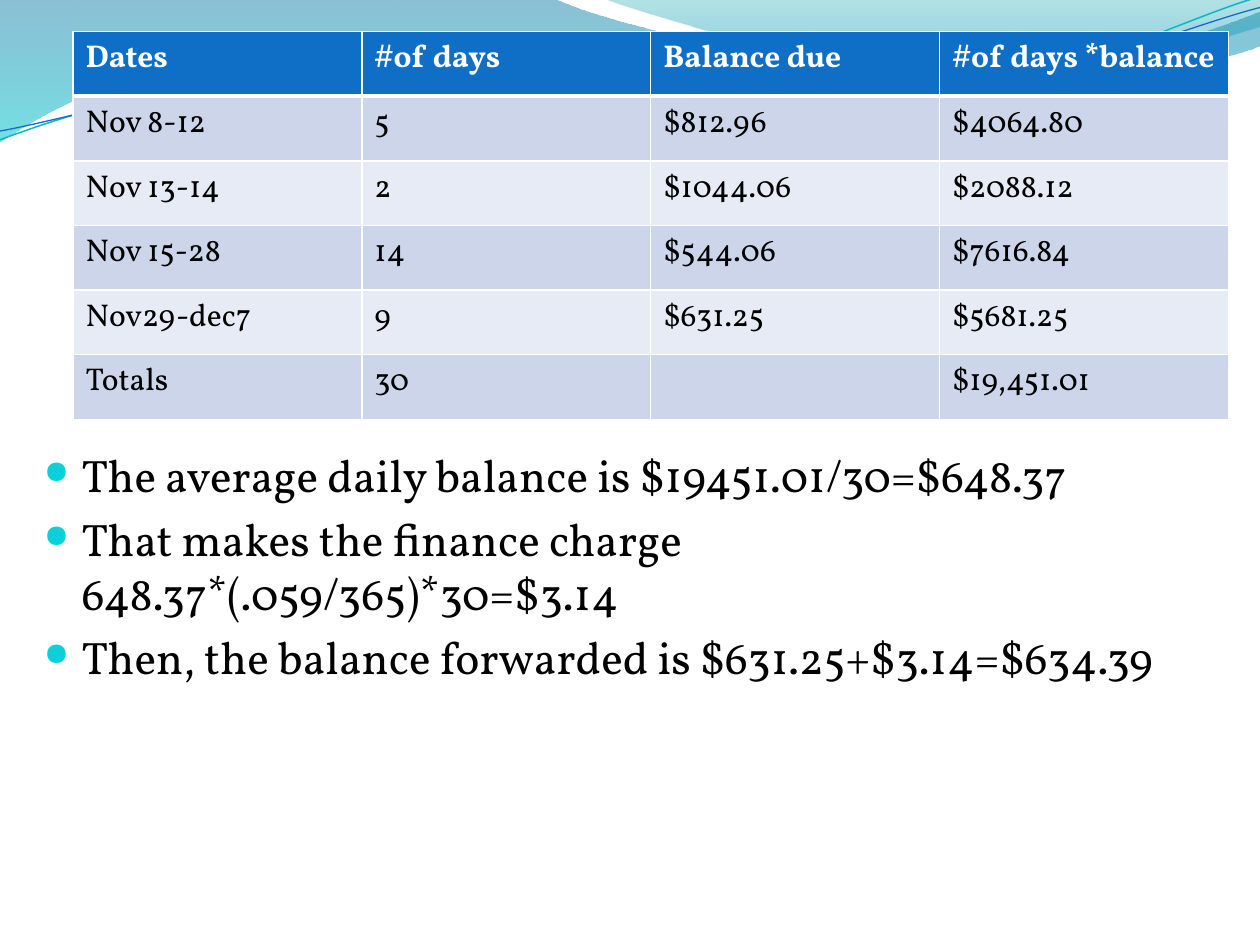
from dataclasses import dataclass
from math import cos, radians, sin
from typing import NamedTuple, Optional

from lxml.etree import SubElement
from pptx import Presentation
from pptx.dml.color import RGBColor as Rgb
from pptx.oxml.ns import qn
from pptx.util import Inches, Pt


@dataclass(frozen=True)
class Theme:
    font: str = "Vollkorn"
    table_size: int = 18
    body_size: int = 26
    bullet_percent: int = 70
    ink: str = "000000"
    paper: str = "FFFFFF"
    header: str = "0F6FC6"
    bands: tuple = ("CCD5EA", "E7EBF5")
    bullet: str = "0BD0D9"
    teal_line: str = "0AB8BF"


THEME = Theme()


class Stop(NamedTuple):
    position: float
    color: str
    opacity: int


@dataclass(frozen=True)
class Wave:
    start: tuple
    steps: tuple
    stops: tuple = ()
    stroke: Optional[str] = None
    stroke_width: float = 0
    tilt: float = 0
    pivot: tuple = (5, 0.58)


WAVES = (
    Wave((0, 0), (
        ((4.4, -0.01),),
        ((4.76, 0.17), (6.64, 0.63), (7.58, 0.63)),
        ((8.53, 0.63), (9.58, 0.26), (10, 0.09)),
        ((10.01, 0.36),),
        ((9.83, 0.44), (8.7, 0.76), (7.46, 0.75)),
        ((6.22, 0.75), (3.82, 0.28), (2.57, 0.34)),
        ((1.29, 0.36), (0.46, 0.83), (-0.01, 1.13)),
    ), stops=(Stop(0, "0074A1", 45), Stop(1, "00C6CF", 55))),
    Wave((4.79, -0.01), (
        ((5.09, 0.11), (6.82, 0.62), (7.69, 0.65)),
        ((8.56, 0.69), (9.61, 0.32), (10, 0.21)),
        ((10, 0),),
    ), stops=(Stop(0, "00A1A9", 30), Stop(0.8, "008BBF", 45))),
    Wave((0, 1.11), (
        ((0.48, 0.93), (1.58, 0.57), (2.77, 0.52)),
        ((3.95, 0.47), (5.93, 0.89), (7.13, 0.8)),
        ((8.33, 0.71), (9.38, 0.15), (9.98, -0.02)),
    ), stroke=THEME.teal_line, stroke_width=0.85, tilt=-2.7),
    Wave((0, 1.04), (
        ((0.47, 0.96), (1.64, 0.61), (2.83, 0.56)),
        ((4.03, 0.51), (5.97, 0.84), (7.17, 0.75)),
        ((8.36, 0.67), (9.41, 0.21), (10, 0.06)),
    ), stroke=THEME.header, stroke_width=0.75, tilt=-2.7),
)

BALANCES = (
    ("Dates", "#of days", "Balance due", "#of days *balance"),
    ("Nov 8-12", "5", "$812.96", "$4064.80"),
    ("Nov 13-14", "2", "$1044.06", "$2088.12"),
    ("Nov 15-28", "14", "$544.06", "$7616.84"),
    ("Nov29-dec7", "9", "$631.25", "$5681.25"),
    ("Totals", "30", "", "$19,451.01"),
)

CONCLUSIONS = (
    "The average daily balance is $19451.01/30=$648.37",
    "That makes the finance charge 648.37*(.059/365)*30=$3.14",
    "Then, the balance forwarded is $631.25+$3.14=$634.39",
)


def write(paragraph, text: str, *, size: int, color: str = THEME.ink, bold: bool = False) -> None:
    run = paragraph.add_run()
    run.text = text
    run.font.name = THEME.font
    run.font.size = Pt(size)
    run.font.bold = bold
    run.font.color.rgb = Rgb.from_string(color)


def level(point: tuple, wave: Wave) -> tuple:
    turn = radians(-wave.tilt)
    center_x, center_y = wave.pivot
    dx, dy = point[0] - center_x, point[1] - center_y
    return (Inches(center_x + dx * cos(turn) - dy * sin(turn)),
            Inches(center_y + dx * sin(turn) + dy * cos(turn)))


def bend(ribbon, wave: Wave) -> None:
    segments = iter(list(ribbon._element.iter(qn("a:lnTo"))))
    for step in wave.steps:
        first, *others = [next(segments) for _ in step]
        if not others:
            continue
        curve = first.makeelement(qn("a:cubicBezTo"))
        first.addprevious(curve)
        for segment in (first, *others):
            curve.append(segment[0])
            segment.getparent().remove(segment)


def draw_wave(slide, wave: Wave) -> None:
    builder = slide.shapes.build_freeform(*level(wave.start, wave))
    points = [level(point, wave) for step in wave.steps for point in step]
    builder.add_line_segments(points, close=bool(wave.stops))
    ribbon = builder.convert_to_shape()
    bend(ribbon, wave)
    ribbon.rotation = wave.tilt
    ribbon.shadow.inherit = False
    if not wave.stops:
        ribbon.fill.background()
        ribbon.line.color.rgb = Rgb.from_string(wave.stroke)
        ribbon.line.width = Pt(wave.stroke_width)
        return
    ribbon.line.fill.background()
    ribbon.fill.gradient()
    ribbon.fill.gradient_angle = 270
    for target, stop in zip(ribbon.fill.gradient_stops, wave.stops):
        target.position = stop.position
        target.color.rgb = Rgb.from_string(stop.color)
    colors = ribbon._element.spPr.iter(qn("a:srgbClr"))
    for color, stop in zip(colors, wave.stops):
        SubElement(color, qn("a:alpha"), val=str(stop.opacity * 1000))


def add_border(cell, side: str, width: float) -> None:
    border = SubElement(cell._tc.get_or_add_tcPr(), qn(f"a:ln{side}"), w=str(Pt(width)))
    paint = SubElement(border, qn("a:solidFill"))
    SubElement(paint, qn("a:srgbClr"), val=THEME.paper)


def draw_balances(slide) -> None:
    table = slide.shapes.add_table(
        len(BALANCES), len(BALANCES[0]),
        Inches(0.58), Inches(0.25), Inches(9.17), Inches(3.08),
    ).table
    for row, entries in enumerate(BALANCES):
        is_header = row == 0
        band = THEME.header if is_header else THEME.bands[(row - 1) % 2]
        widths = {"L": 1, "R": 1, "T": 3 if row == 1 else 1, "B": 3 if is_header else 1}
        for column, entry in enumerate(entries):
            cell = table.cell(row, column)
            for side, width in widths.items():
                add_border(cell, side, width)
            cell.fill.solid()
            cell.fill.fore_color.rgb = Rgb.from_string(band)
            if entry:
                write(cell.text_frame.paragraphs[0], entry, size=THEME.table_size,
                      color=THEME.paper if is_header else THEME.ink, bold=is_header)


def add_bullet(paragraph) -> None:
    properties = paragraph._p.get_or_add_pPr()
    properties.set("marL", str(Inches(0.3)))
    properties.set("indent", str(-Inches(0.3)))
    tint = SubElement(properties, qn("a:buClr"))
    SubElement(tint, qn("a:srgbClr"), val=THEME.bullet)
    SubElement(properties, qn("a:buSzPct"), val=str(THEME.bullet_percent * 1000))
    SubElement(properties, qn("a:buChar"), char="●")


def draw_conclusions(slide) -> None:
    frame = slide.shapes.add_textbox(
        Inches(0.25), Inches(3.5), Inches(9.25), Inches(3.4)).text_frame
    frame.word_wrap = True
    for index, conclusion in enumerate(CONCLUSIONS):
        paragraph = frame.add_paragraph() if index else frame.paragraphs[0]
        paragraph.space_before = Pt(0.2 * THEME.body_size)
        add_bullet(paragraph)
        write(paragraph, conclusion, size=THEME.body_size)


def main() -> None:
    deck = Presentation()
    deck.slide_width, deck.slide_height = Inches(10), Inches(7.5)
    slide = deck.slides.add_slide(deck.slide_layouts[6])
    for wave in WAVES:
        draw_wave(slide, wave)
    draw_conclusions(slide)
    draw_balances(slide)
    deck.save("out.pptx")


if __name__ == "__main__":
    main()
